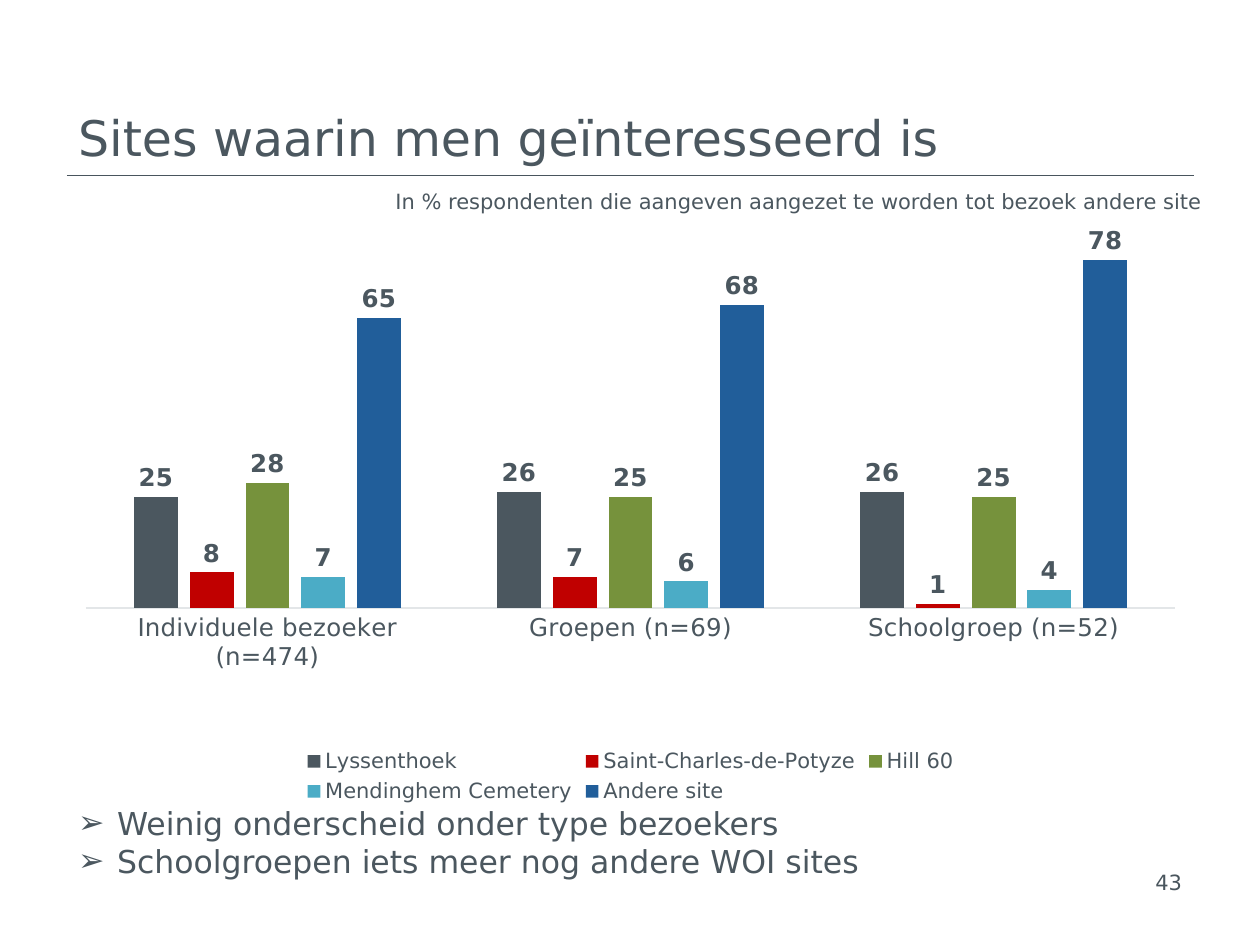
from lxml.etree import SubElement
from pptx import Presentation
from pptx.chart.data import CategoryChartData
from pptx.dml.color import RGBColor
from pptx.enum.chart import XL_CHART_TYPE, XL_LABEL_POSITION, XL_LEGEND_POSITION, XL_TICK_MARK
from pptx.enum.shapes import MSO_CONNECTOR
from pptx.enum.text import MSO_ANCHOR, MSO_AUTO_SIZE, PP_ALIGN
from pptx.oxml import parse_xml
from pptx.oxml.ns import nsdecls, qn
from pptx.util import Inches, Pt

FONT = "DejaVu Sans"
COLORS = {
    "text": "4B575F",
    "rule": "49555D",
    "axis": "E3E6E8",
    "Lyssenthoek": "4B575F",
    "Saint-Charles-de-Potyze": "C00000",
    "Hill 60": "76923C",
    "Mendinghem Cemetery": "4BACC6",
    "Andere site": "215E9A",
}
VISITORS = ["Individuele bezoeker (n=474)", "Groepen (n=69)", "Schoolgroep (n=52)"]
SITES = {
    "Lyssenthoek": (25, 26, 26),
    "Saint-Charles-de-Potyze": (8, 7, 1),
    "Hill 60": (28, 25, 25),
    "Mendinghem Cemetery": (7, 6, 4),
    "Andere site": (65, 68, 78),
}
FINDINGS = ["Weinig onderscheid onder type bezoekers", "Schoolgroepen iets meer nog andere WOI sites"]
PLOT_AREA = {"x": 0.017, "y": 0.004, "w": 0.966, "h": 0.664}


def rgb(name):
    """Return the named palette colour."""
    return RGBColor.from_string(COLORS[name])


def style_font(font, size, color="text", bold=False):
    """Apply the slide typeface with a size, colour and weight."""
    font.name, font.size, font.bold = FONT, Pt(size), bold
    font.color.rgb = rgb(color)


def place(part, left, top, width, height):
    """Move and size a part of the slide, in inches."""
    part.left, part.top = Inches(left), Inches(top)
    part.width, part.height = Inches(width), Inches(height)


def fill_title(title):
    """Write the heading above the rule."""
    place(title, 0.52, 0.75, 8.97, 1.11)
    frame = title.text_frame
    frame.text = "Sites waarin men geïnteresseerd is"
    frame.auto_size = MSO_AUTO_SIZE.NONE
    frame.vertical_anchor = MSO_ANCHOR.TOP
    frame.margin_top = Inches(0.1)
    heading = frame.paragraphs[0]
    heading.alignment = PP_ALIGN.LEFT
    style_font(heading.font, 28)


def add_rule(slide):
    """Draw the thin line under the heading."""
    rule = slide.shapes.add_connector(
        MSO_CONNECTOR.STRAIGHT, Inches(0.53), Inches(1.39), Inches(9.48), Inches(1.39))
    rule.line.color.rgb = rgb("rule")
    rule.line.width = Pt(0.25)
    SubElement(rule.element.spPr, qn("a:effectLst"))


def add_note(slide, wording, bounds, color, anchor):
    """Add a small right-aligned text."""
    frame = slide.shapes.add_textbox(*map(Inches, bounds)).text_frame
    frame.word_wrap = True
    frame.vertical_anchor = anchor
    frame.text = wording
    note = frame.paragraphs[0]
    note.alignment = PP_ALIGN.RIGHT
    style_font(note.font, 12, color)


def fill_findings(body):
    """Write the conclusions as an arrow-bulleted list."""
    place(body, 0.52, 6.33, 9.12, 0.71)
    frame = body.text_frame
    frame.text = "\n".join(FINDINGS)
    frame.auto_size = MSO_AUTO_SIZE.NONE
    indent = Inches(0.31)
    for finding in frame.paragraphs:
        properties = finding._p.get_or_add_pPr()
        properties.set("marL", str(indent))
        properties.set("indent", str(-indent))
        SubElement(properties, qn("a:buChar"), char="➢")
        finding.space_before = Pt(0)
        style_font(finding.font, 18)


def set_plot_layout(chart):
    """Fix the inner plot area as fractions of the chart."""
    plot_area = chart.element.find(".//" + qn("c:plotArea"))
    for automatic in plot_area.findall(qn("c:layout")):
        plot_area.remove(automatic)
    sizes = "".join(f'<c:{side} val="{share}"/>' for side, share in PLOT_AREA.items())
    plot_area.insert(0, parse_xml(
        f'<c:layout {nsdecls("c")}><c:manualLayout><c:layoutTarget val="inner"/>'
        f'<c:xMode val="edge"/><c:yMode val="edge"/>{sizes}</c:manualLayout></c:layout>'))


def style_axes(chart):
    """Show only the visitor axis and hide the value axis."""
    visitors, share = chart.category_axis, chart.value_axis
    visitors.major_tick_mark = visitors.minor_tick_mark = XL_TICK_MARK.NONE
    visitors.format.line.color.rgb = rgb("axis")
    visitors.format.line.width = Pt(0.75)
    style_font(visitors.tick_labels.font, 14)
    share.visible = False
    share.has_major_gridlines = False
    share.minimum_scale, share.maximum_scale = 0, 90


def style_site(site):
    """Colour the columns of one site and label them."""
    site.format.fill.solid()
    site.format.fill.fore_color.rgb = rgb(site.name)
    site.invert_if_negative = False
    labels = site.data_labels
    labels.show_value = True
    labels.position = XL_LABEL_POSITION.OUTSIDE_END
    labels.number_format, labels.number_format_is_linked = "0", False
    style_font(labels.font, 14, bold=True)


def add_site_chart(slide):
    """Add the clustered columns of sites by visitor type."""
    interest = CategoryChartData(number_format="0")
    interest.categories = VISITORS
    for site, shares in SITES.items():
        interest.add_series(site, shares)
    bounds = map(Inches, (0.53, 1.62, 8.95, 4.8))
    chart = slide.shapes.add_chart(XL_CHART_TYPE.COLUMN_CLUSTERED, *bounds, interest).chart
    style_font(chart.font, 10)
    chart.has_title = False
    chart.has_legend = True
    chart.legend.position = XL_LEGEND_POSITION.BOTTOM
    chart.legend.include_in_layout = False
    style_font(chart.legend.font, 12)
    style_axes(chart)
    columns = chart.plots[0]
    columns.gap_width, columns.overlap = 219, -27
    columns.vary_by_categories = False
    for site in columns.series:
        style_site(site)
    set_plot_layout(chart)


def main():
    """Build and save the slide."""
    deck = Presentation()
    deck.slide_width, deck.slide_height = Inches(10), Inches(7.5)
    slide = deck.slides.add_slide(deck.slide_layouts[1])
    add_rule(slide)
    fill_title(slide.shapes.title)
    add_note(slide, "43", (7.15, 6.8, 2.33, 0.4), "rule", MSO_ANCHOR.MIDDLE)
    add_site_chart(slide)
    fill_findings(slide.placeholders[1])
    add_note(slide, "In % respondenten die aangeven aangezet te worden tot bezoek andere site",
             (0.52, 1.45, 9.12, 0.3), "text", MSO_ANCHOR.TOP)
    deck.save("out.pptx")


if __name__ == "__main__":
    main()
